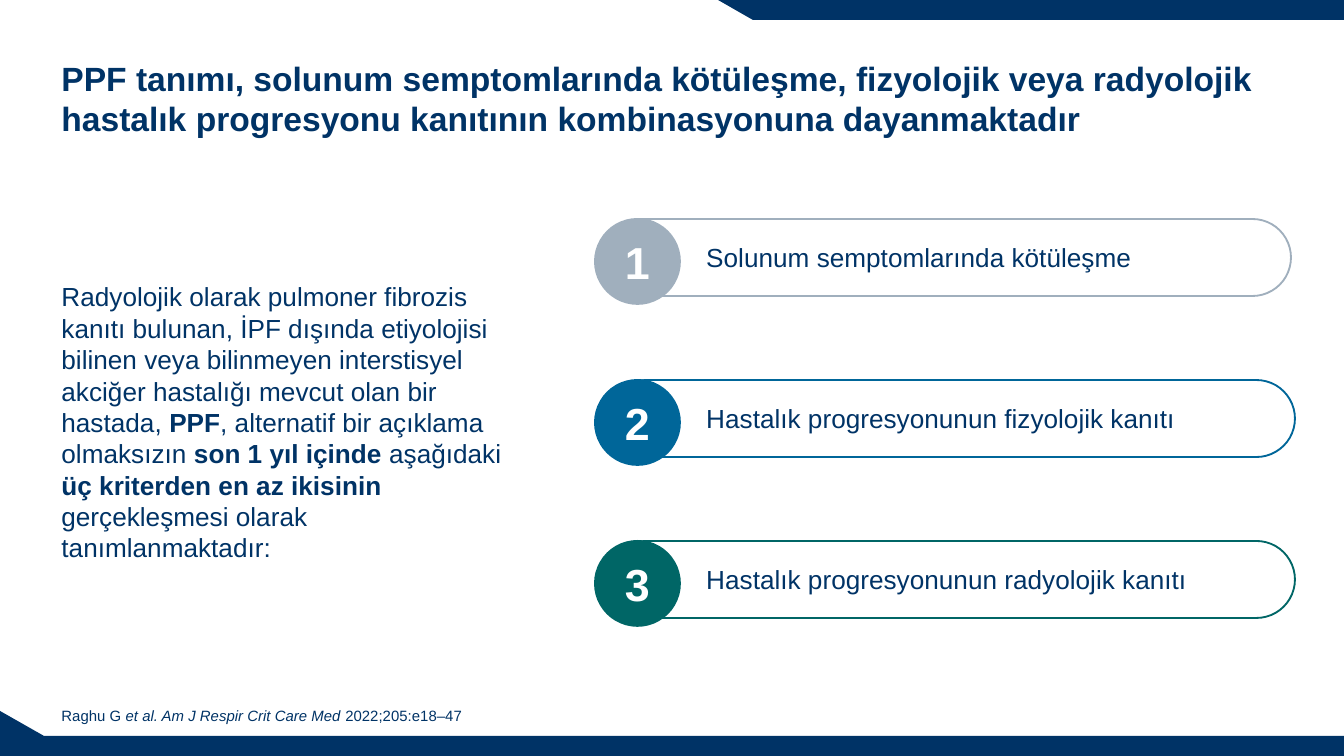
from dataclasses import dataclass

from lxml import etree
from pptx import Presentation
from pptx.dml.color import RGBColor
from pptx.enum.shapes import MSO_SHAPE
from pptx.enum.text import MSO_ANCHOR, MSO_AUTO_SIZE, PP_ALIGN
from pptx.oxml.ns import qn
from pptx.util import Pt

PILL, CIRCLE = MSO_SHAPE.ROUNDED_RECTANGLE, MSO_SHAPE.OVAL
TOP, MIDDLE, BOTTOM = MSO_ANCHOR.TOP, MSO_ANCHOR.MIDDLE, MSO_ANCHOR.BOTTOM
LEFT, CENTER = PP_ALIGN.LEFT, PP_ALIGN.CENTER
NO_FIT = MSO_AUTO_SIZE.NONE

EMU_PER_PX = 914400 / 134.4
PAGE_WIDTH, PAGE_HEIGHT = 1344, 756
TWO_CONTENT_LAYOUT = 3


@dataclass(frozen=True)
class Theme:
    font: str = "Arial"
    navy: str = "003366"
    white: str = "FFFFFF"
    grey: str = "A0AFBD"
    blue: str = "006699"
    green: str = "006666"
    title_size: int = 18
    body_size: int = 14
    badge_size: int = 24
    source_size: int = 8
    line_width: int = 1
    gap: int = 3


def px(*lengths):
    return [round(length * EMU_PER_PX) for length in lengths]


class SlideBuilder:
    def __init__(self, page, theme):
        self.page = page
        self.theme = theme

    def paint(self, shape, fill, line=None):
        shape.shadow.inherit = False
        shape.fill.solid()
        shape.fill.fore_color.rgb = RGBColor.from_string(fill)
        if line:
            shape.line.color.rgb = RGBColor.from_string(line)
            shape.line.width = Pt(self.theme.line_width)
        else:
            shape.line.fill.background()

    def add_text(self, shape, spans, size, anchor=TOP, align=LEFT, color=None, gap=0):
        """Fill a shape with one paragraph of (text, style) spans."""
        frame = shape.text_frame
        frame.word_wrap = True
        frame.auto_size = NO_FIT
        frame.vertical_anchor = anchor
        para = frame.paragraphs[0]
        para.alignment = align
        para.space_before = para.space_after = Pt(gap)
        for text, style in spans:
            span = para.add_run()
            span.text = text
            span.font.name = self.theme.font
            span.font.size = Pt(size)
            span.font.bold = style == "bold"
            span.font.italic = style == "italic"
            span.font.color.rgb = RGBColor.from_string(color or self.theme.navy)
        return para

    def band(self, points):
        builder = self.page.shapes.build_freeform(*points[0], scale=EMU_PER_PX)
        builder.add_line_segments(points[1:], close=True)
        self.paint(builder.convert_to_shape(), self.theme.navy)

    def placeholder(self, index, frame, spans, size, anchor, gap=0):
        box = self.page.placeholders[index]
        box.left, box.top, box.width, box.height = px(*frame)
        para = self.add_text(box, spans, size, anchor, gap=gap)
        properties = para._p.get_or_add_pPr()
        properties.set("marL", "0")
        properties.set("indent", "0")
        etree.SubElement(properties, qn("a:buNone"))

    def shape(self, kind, frame, fill, line):
        shape = self.page.shapes.add_shape(kind, *px(*frame))
        self.paint(shape, fill, line)
        return shape

    def label(self, frame, text):
        box = self.page.shapes.add_textbox(*px(*frame))
        self.add_text(box, [(text, "")], self.theme.body_size, gap=self.theme.gap)

    def criterion(self, number, top, text, color, pill_left):
        theme = self.theme
        pill = self.shape(PILL, (pill_left, top, 687, 77), theme.white, color)
        pill.adjustments[0] = 0.5
        badge = self.shape(CIRCLE, (595, top, 85, 85), color, color)
        self.add_text(badge, [(str(number), "bold")], theme.badge_size,
                      MIDDLE, CENTER, theme.white)
        self.label((693, top + 16, 597, 46), text)


def main():
    theme = Theme()
    deck = Presentation()
    deck.slide_width, deck.slide_height = px(PAGE_WIDTH, PAGE_HEIGHT)
    page = deck.slides.add_slide(deck.slide_layouts[TWO_CONTENT_LAYOUT])
    slide = SlideBuilder(page, theme)

    # Corner bands
    slide.band([(718, 0), (PAGE_WIDTH, 0), (PAGE_WIDTH, 20), (753, 20)])
    slide.band([(0, 711), (44, 736), (PAGE_WIDTH, 736),
                (PAGE_WIDTH, PAGE_HEIGHT), (0, PAGE_HEIGHT)])

    # Title, definition and source
    slide.placeholder(0, (48, 40, 1246, 105), [
        ("PPF tanımı, solunum semptomlarında kötüleşme, fizyolojik veya "
         "radyolojik hastalık progresyonu kanıtının kombinasyonuna "
         "dayanmaktadır", "bold"),
    ], theme.title_size, BOTTOM)
    slide.placeholder(1, (48, 258, 473, 328), [
        ("Radyolojik olarak pulmoner fibrozis kanıtı bulunan, İPF dışında "
         "etiyolojisi bilinen veya bilinmeyen interstisyel akciğer hastalığı "
         "mevcut olan bir hastada, ", ""),
        ("PPF", "bold"),
        (", alternatif bir açıklama olmaksızın ", ""),
        ("son 1 yıl içinde ", "bold"),
        ("aşağıdaki ", ""),
        ("üç kriterden en az ikisinin ", "bold"),
        ("gerçekleşmesi olarak tanımlanmaktadır:", ""),
    ], theme.body_size, MIDDLE, theme.gap)
    slide.placeholder(2, (48, 691, 1171, 40), [
        ("Raghu G ", ""),
        ("et al. Am J Respir Crit Care Med ", "italic"),
        ("2022;205:e18–47", ""),
    ], theme.source_size, BOTTOM, theme.gap)

    # Numbered criteria
    criteria = [
        ("Solunum semptomlarında kötüleşme", theme.grey, 604),
        ("Hastalık progresyonunun fizyolojik kanıtı", theme.blue, 608),
        ("Hastalık progresyonunun radyolojik kanıtı", theme.green, 608),
    ]
    for row, (text, color, pill_left) in enumerate(criteria):
        slide.criterion(row + 1, 219 + 161 * row, text, color, pill_left)

    deck.save("out.pptx")


if __name__ == "__main__":
    main()
